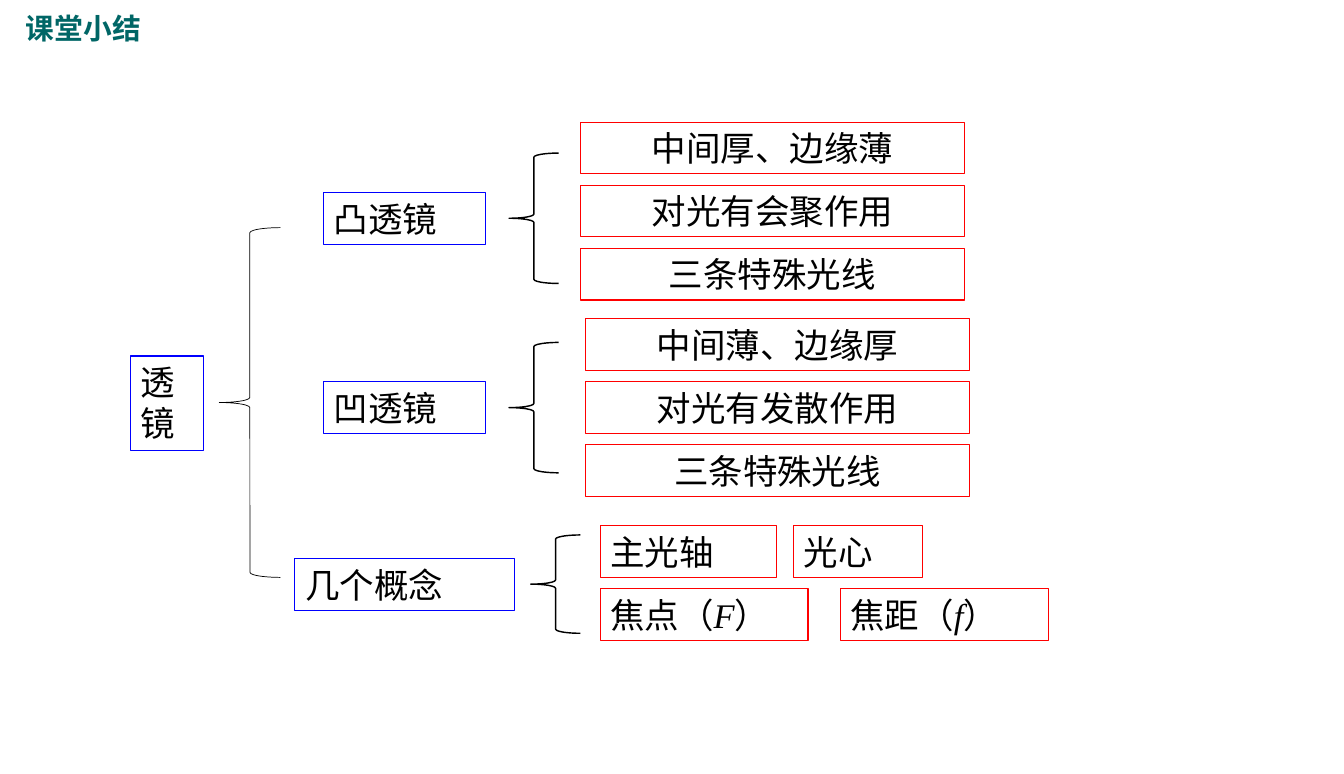
import pptx
import pptx.dml.color
import pptx.enum.shapes
import pptx.enum.text
import pptx.util

Inches = pptx.util.Inches
Pt = pptx.util.Pt
RGBColor = pptx.dml.color.RGBColor
MSO_SHAPE = pptx.enum.shapes.MSO_SHAPE
PP_ALIGN = pptx.enum.text.PP_ALIGN

TEAL = RGBColor(0x00, 0x66, 0x66)
BLUE = RGBColor(0x00, 0x00, 0xFF)
RED = RGBColor(0xFF, 0x00, 0x00)
BLACK = RGBColor(0x00, 0x00, 0x00)

TITLE = "课堂小结"
# text, left, top, width, height
TOPICS = [
    ("透镜", 1.26, 3.44, 0.71, 0.91),
    ("凸透镜", 3.13, 1.86, 1.56, 0.5),
    ("凹透镜", 3.13, 3.69, 1.56, 0.5),
    ("几个概念", 2.85, 5.4, 2.12, 0.5),
]
# left, top, features of one lens
LENS_FEATURES = [
    (5.61, 1.18, ["中间厚、边缘薄", "对光有会聚作用", "三条特殊光线"]),
    (5.66, 3.08, ["中间薄、边缘厚", "对光有发散作用", "三条特殊光线"]),
]
# text, symbol, left, row, width
CONCEPTS = [
    ("主光轴", "", 5.8, 0, 1.71),
    ("光心", "", 7.67, 0, 1.25),
    ("焦点", "F", 5.8, 1, 2.01),
    ("焦距", "f", 8.12, 1, 2.01),
]
# left, top, width, height, line width
BRACES = [
    (4.92, 1.48, 0.48, 1.26, 1),
    (4.92, 3.31, 0.48, 1.26, 1),
    (5.13, 5.17, 0.48, 0.95, 1),
    (2.12, 2.2, 0.59, 3.38, 0.5),
]
FEATURE_WIDTH, BOX_HEIGHT, ROW_STEP = 3.71, 0.5, 0.61
CONCEPTS_TOP = 5.08

FRAME_FORMAT = {
    "word_wrap": True,
    "auto_size": pptx.enum.text.MSO_AUTO_SIZE.SHAPE_TO_FIT_TEXT,
    "vertical_anchor": pptx.enum.text.MSO_ANCHOR.TOP,
    "margin_left": Inches(0.1),
    "margin_right": Inches(0.1),
    "margin_top": Inches(0.05),
    "margin_bottom": Inches(0.05),
}
TITLE_FONT = {"name": "Arial", "size": Pt(20), "bold": True}
BODY_FONT = {"name": "Arial", "size": Pt(24)}
SYMBOL_FONT = {"name": "Times New Roman", "size": Pt(24)}


def set_attributes(target, values):
    for name, value in values.items():
        setattr(target, name, value)


def write_text(shape, pieces, font, color, alignment=PP_ALIGN.LEFT):
    """Fill the shape with (text, italic) pieces in one paragraph."""
    set_attributes(shape.text_frame, FRAME_FORMAT)
    paragraph = shape.text_frame.paragraphs[0]
    paragraph.alignment = alignment
    for text, italic in pieces:
        run = paragraph.add_run()
        run.text = text
        set_attributes(run.font, {**font, "italic": italic})
        run.font.color.rgb = color


def add_outline(slide, kind, bounds, color, line_width):
    shape = slide.shapes.add_shape(kind, *map(Inches, bounds))
    shape.shadow.inherit = False
    shape.fill.background()
    shape.line.color.rgb = color
    shape.line.width = Pt(line_width)
    return shape


def add_box(slide, bounds, color, pieces, font=BODY_FONT, alignment=PP_ALIGN.LEFT):
    shape = add_outline(slide, MSO_SHAPE.RECTANGLE, bounds, color, 0.75)
    write_text(shape, pieces, font, BLACK, alignment)


def main():
    presentation = pptx.Presentation()
    presentation.slide_width = Inches(12.99)
    presentation.slide_height = Inches(7.48)
    slide = presentation.slides.add_slide(presentation.slide_layouts[5])

    title = slide.shapes.title
    set_attributes(title, {"left": Inches(0.15), "top": Inches(0.05),
                           "width": Inches(1.84), "height": Inches(0.44)})
    write_text(title, [(TITLE, False)], TITLE_FONT, TEAL)

    for text, *bounds in TOPICS:
        add_box(slide, bounds, BLUE, [(text, False)])

    for left, top, features in LENS_FEATURES:
        for row, text in enumerate(features):
            bounds = (left, top + row * ROW_STEP, FEATURE_WIDTH, BOX_HEIGHT)
            add_box(slide, bounds, RED, [(text, False)], alignment=PP_ALIGN.CENTER)

    for text, symbol, left, row, width in CONCEPTS:
        bounds = (left, CONCEPTS_TOP + row * ROW_STEP, width, BOX_HEIGHT)
        if symbol:
            pieces = [(text + "（", False), (symbol, True), ("）", False)]
            add_box(slide, bounds, RED, pieces, SYMBOL_FONT)
        else:
            add_box(slide, bounds, RED, [(text, False)])

    for *bounds, line_width in BRACES:
        add_outline(slide, MSO_SHAPE.LEFT_BRACE, bounds, BLACK, line_width)

    presentation.save("out.pptx")


if __name__ == "__main__":
    main()
